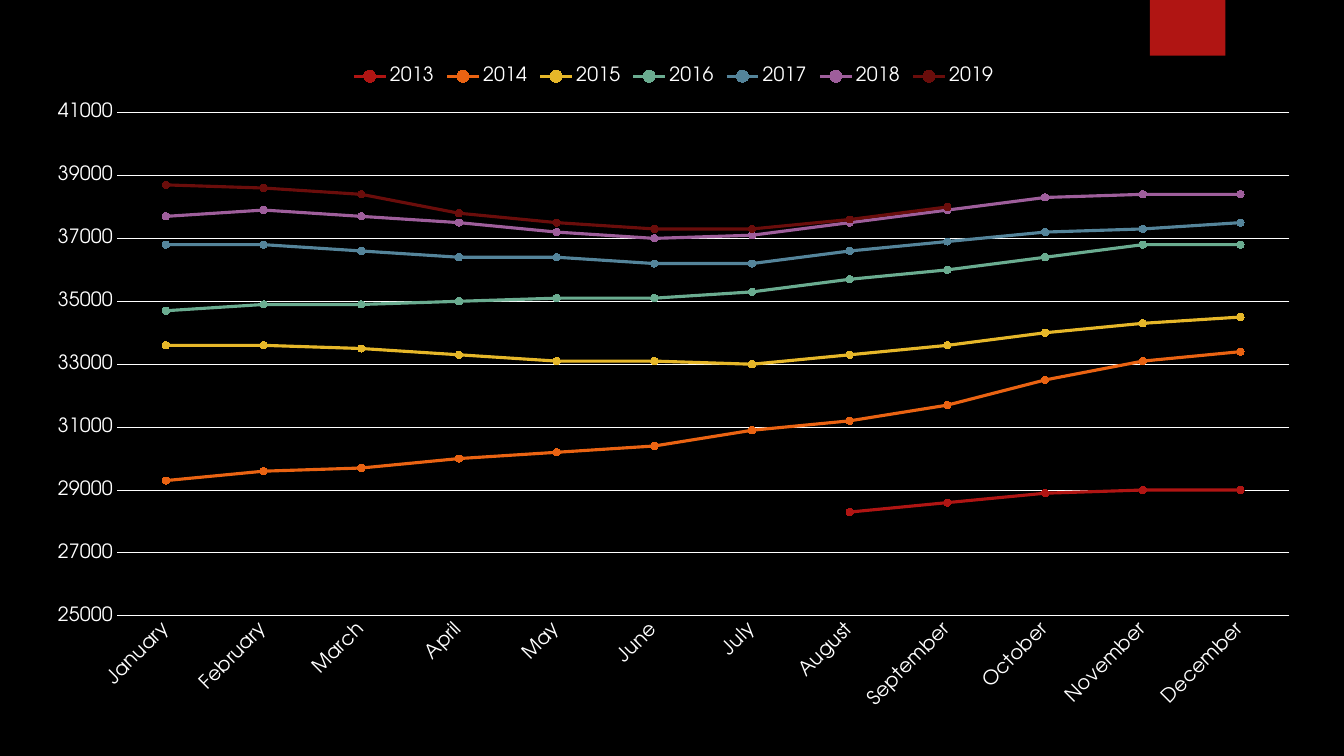
from lxml import etree
from pptx import Presentation
from pptx.chart.data import CategoryChartData
from pptx.dml.color import RGBColor
from pptx.enum.chart import XL_CHART_TYPE, XL_LEGEND_POSITION, XL_MARKER_STYLE, XL_TICK_MARK
from pptx.enum.shapes import MSO_SHAPE
from pptx.oxml import parse_xml
from pptx.util import Cm, Pt

FONT = "TeX Gyre Adventor"
COLORS = {
    "background": "000000", "text": "FFFFFF", "tab": "B01513",
    "2013": "B01513", "2014": "EA6312", "2015": "E6B729", "2016": "6AAC90",
    "2017": "54849A", "2018": "9E5E9B", "2019": "6A0D0B",
}
MONTHS = ["January", "February", "March", "April", "May", "June", "July",
          "August", "September", "October", "November", "December"]
VALUES = {
    "2013": [None] * 7 + [28300, 28600, 28900, 29000, 29000],
    "2014": [29300, 29600, 29700, 30000, 30200, 30400,
             30900, 31200, 31700, 32500, 33100, 33400],
    "2015": [33600, 33600, 33500, 33300, 33100, 33100,
             33000, 33300, 33600, 34000, 34300, 34500],
    "2016": [34700, 34900, 34900, 35000, 35100, 35100,
             35300, 35700, 36000, 36400, 36800, 36800],
    "2017": [36800, 36800, 36600, 36400, 36400, 36200,
             36200, 36600, 36900, 37200, 37300, 37500],
    "2018": [37700, 37900, 37700, 37500, 37200, 37000,
             37100, 37500, 37900, 38300, 38400, 38400],
    "2019": [38700, 38600, 38400, 37800, 37500, 37300,
             37300, 37600, 38000] + [None] * 3,
}


def color(name):
    return RGBColor.from_string(COLORS[name])


def style_font(font, size):
    font.name = FONT
    font.size = Pt(size)
    font.color.rgb = color("text")


deck = Presentation()
deck.slide_width, deck.slide_height = Cm(33.87), Cm(19.05)
page = deck.slides.add_slide(deck.slide_layouts[6])
page.background.fill.solid()
page.background.fill.fore_color.rgb = color("background")

# Red tab at the top edge
tab = page.shapes.add_shape(MSO_SHAPE.RECTANGLE, Cm(28.98), Cm(0), Cm(1.9), Cm(3.18))
tab.shadow.inherit = False
tab.fill.solid()
tab.fill.fore_color.rgb = color("tab")
tab.line.fill.background()

# Line chart, one series per year
data = CategoryChartData(number_format="0")
data.categories = MONTHS
for year, values in VALUES.items():
    data.add_series(year, values)
chart = page.shapes.add_chart(XL_CHART_TYPE.LINE_MARKERS, Cm(0.81), Cm(1.4),
                              Cm(32.33), Cm(16.81), data).chart
chart.has_title = False
style_font(chart.font, 10)
chart.plots[0].vary_by_categories = False

for series in chart.plots[0].series:
    series.smooth = False
    series.format.line.width = Pt(2.25)
    series.format.line.color.rgb = color(series.name)
    marker = series.marker
    marker.style = XL_MARKER_STYLE.CIRCLE
    marker.size = 5
    marker.format.fill.solid()
    marker.format.fill.fore_color.rgb = color(series.name)
    marker.format.line.color.rgb = color(series.name)

chart.has_legend = True
chart.legend.position = XL_LEGEND_POSITION.TOP
chart.legend.include_in_layout = False
style_font(chart.legend.font, 14)

month_axis, value_axis = chart.category_axis, chart.value_axis
for axis in (month_axis, value_axis):
    axis.major_tick_mark = axis.minor_tick_mark = XL_TICK_MARK.NONE
    style_font(axis.tick_labels.font, 14)

value_axis.minimum_scale, value_axis.maximum_scale = 25000, 41000
value_axis.major_unit = 2000
value_axis.tick_labels.number_format = "0"
value_axis.tick_labels.number_format_is_linked = False
value_axis.format.line.fill.background()
for line in (month_axis.format.line, value_axis.major_gridlines.format.line):
    line.width = Pt(0.75)
    line.color.rgb = color("text")

# Slanted month labels
label_body = month_axis._element.txPr.find("{*}bodyPr")
label_body.set("rot", "-2700000")
label_body.set("vert", "horz")

# Opaque chart background, which covers the lower part of the tab
chart_area = parse_xml(
    '<c:spPr xmlns:c="http://schemas.openxmlformats.org/drawingml/2006/chart"'
    ' xmlns:a="http://schemas.openxmlformats.org/drawingml/2006/main"><a:solidFill/>'
    '<a:ln><a:noFill/></a:ln></c:spPr>')
area_fill = chart_area[0]
area_color = etree.SubElement(area_fill, area_fill.tag.replace("solidFill", "srgbClr"))
area_color.set("val", COLORS["background"])
chart._chartSpace.find("{*}txPr").addprevious(chart_area)

deck.save("out.pptx")
